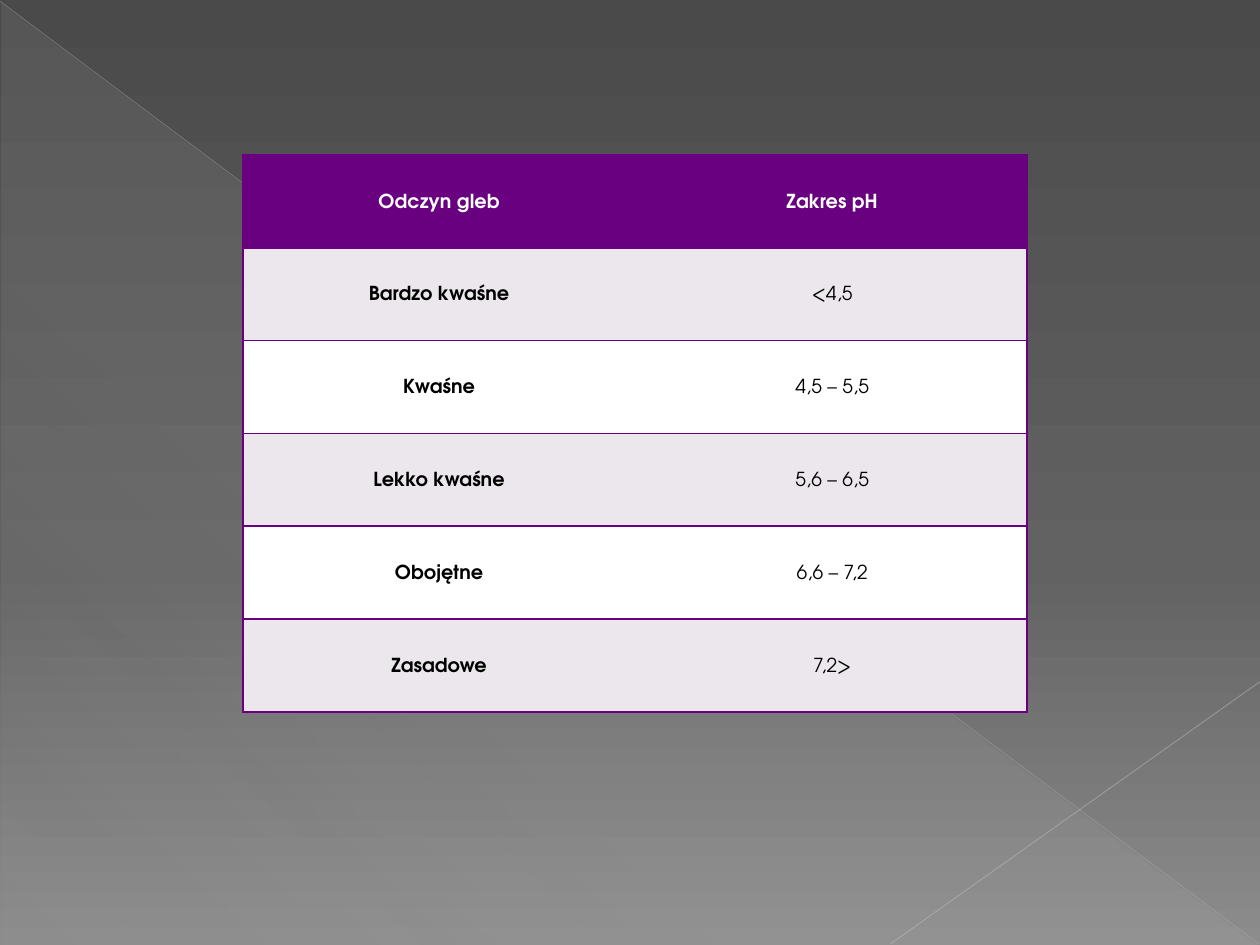
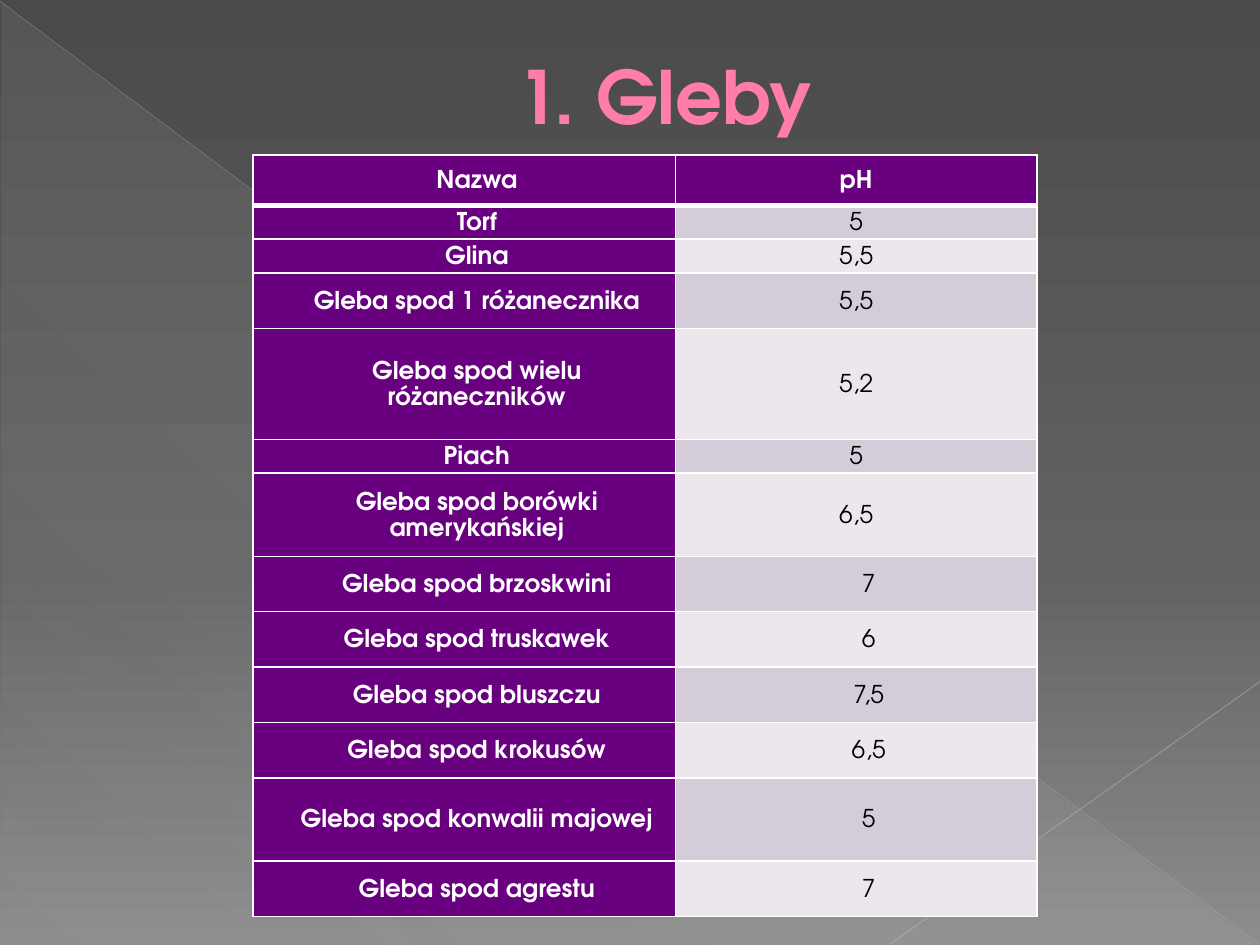
from typing import NamedTuple

from pptx import Presentation
from pptx.dml.color import RGBColor as Rgb
from pptx.enum.shapes import MSO_CONNECTOR as Conn, MSO_SHAPE as Shape
from pptx.enum.text import MSO_ANCHOR as Anchor, PP_ALIGN as Align
from pptx.oxml import parse_xml
from pptx.oxml.ns import nsdecls, qn
from pptx.util import Emu, Inches, Pt

FONT = "TeX Gyre Adventor"
HUES = {
    "dark": "4A4A4A", "mid": "626262", "pale": "8C8C8C",
    "veil": "D2D2D2", "fall": "BFBFBF", "rise": "C6C6C6",
    "plum": "68007F", "mist": "EBE7EC", "haze": "D4CCD8",
    "white": "FFFFFF", "black": "000000", "pink": "FF7DA7", "rose": "B12761",
}

# The slide is a grid of 100 columns by 75 rows
WIDE, HIGH = Inches(10), Inches(7.5)
COL, ROW = WIDE / 100, HIGH / 75


class Stop(NamedTuple):
    pos: int
    hue: str
    alpha: int = 100


class Ray(NamedTuple):
    start: tuple[float, float]
    end: tuple[float, float]
    hue: str
    width: float
    alpha: int


class Cell(NamedTuple):
    text: str
    fill: str
    hue: str
    bold: bool
    edges: dict[str, float]  # side: width in points
    indent: float = 0


class Chart(NamedTuple):
    """A table: its place, track sizes in grid units and type style."""
    left: float
    top: float
    cols: list[float]
    rows: list[float]
    cells: list[list[Cell]]
    size: float
    inset: float
    edge: str


BACK = [Stop(0, "dark"), Stop(60, "mid"), Stop(100, "pale")]
VEIL = [Stop(0, "veil", 10), Stop(70, "veil", 8), Stop(100, "veil", 1)]
RAYS = [
    Ray((0, 0.1), (99.9, 74.9), "fall", 0.39, 35),
    Ray((100, 54.1), (70.7, 74.9), "rise", 0.47, 45),
]


def across(n: float) -> Emu:
    return Emu(round(n * COL))


def down(n: float) -> Emu:
    return Emu(round(n * ROW))


def rgb(hue: str) -> Rgb:
    return Rgb.from_string(HUES[hue])


def blend(fill, host, stops: list[Stop], angle: int) -> None:
    """Fill with a linear gradient of any number of stops."""
    fill.gradient()
    node = next(host.iter(qn("a:gradFill")))
    marks = "".join(
        f'<a:gs pos="{s.pos * 1000}"><a:srgbClr val="{HUES[s.hue]}">'
        f'<a:alpha val="{s.alpha * 1000}"/></a:srgbClr></a:gs>' for s in stops)
    fresh = parse_xml(
        f'<a:gradFill {nsdecls("a")} rotWithShape="1"><a:gsLst>{marks}</a:gsLst>'
        f'<a:lin ang="{angle * 60000}" scaled="0"/></a:gradFill>')
    node.getparent().replace(node, fresh)


def stroke(tag: str, hue: str, width: float):
    return parse_xml(
        f'<a:{tag} {nsdecls("a")} w="{Pt(width)}"><a:solidFill>'
        f'<a:srgbClr val="{HUES[hue]}"/></a:solidFill></a:{tag}>')


def write(frame, text: str, size: float, hue: str, bold: bool, indent: float):
    """Add one centred run; return it with its paragraph."""
    para = frame.paragraphs[0]
    para.alignment = Align.CENTER
    if indent:
        para._p.get_or_add_pPr().set("marL", str(Inches(indent)))
    run = para.add_run()
    run.text = text
    font = run.font
    font.name, font.size, font.bold = FONT, Pt(size), bold
    font.color.rgb = rgb(hue)
    return para, run


def draw_ray(slide, ray: Ray) -> None:
    (x1, y1), (x2, y2) = ray.start, ray.end
    line = slide.shapes.add_connector(
        Conn.STRAIGHT, across(x1), down(y1), across(x2), down(y2))
    line.line.color.rgb = rgb(ray.hue)
    line.line.width = Pt(ray.width)
    tint = next(line.element.spPr.iter(qn("a:srgbClr")))
    tint.append(parse_xml(f'<a:alpha {nsdecls("a")} val="{ray.alpha * 1000}"/>'))
    line.element.spPr.append(parse_xml(f'<a:effectLst {nsdecls("a")}/>'))


def new_slide(deck):
    """Add a blank slide with the shared veil and rays."""
    slide = deck.slides.add_slide(deck.slide_layouts[6])
    veil = slide.shapes.add_shape(
        Shape.RIGHT_TRIANGLE, across(0.1), down(0.2), across(99.8), down(74.8))
    veil.shadow.inherit = False
    veil.line.fill.background()
    blend(veil.fill, veil.element, VEIL, 133)
    for ray in RAYS:
        draw_ray(slide, ray)
    return slide


def draw_title(slide, text: str) -> None:
    box = slide.shapes.add_textbox(across(5.1), down(1.3), across(90), down(12.5))
    frame = box.text_frame
    frame.word_wrap = True
    frame.vertical_anchor = Anchor.MIDDLE
    _, run = write(frame, text, 42, "pink", True, 0.53)
    run.font._element.insert(0, stroke("ln", "rose", 0.5))


def draw_cell(slot, cell: Cell, chart: Chart) -> None:
    slot.vertical_anchor = Anchor.MIDDLE
    slot.margin_left = slot.margin_right = Inches(chart.inset)
    slot.margin_top = slot.margin_bottom = 0
    slot.fill.solid()
    slot.fill.fore_color.rgb = rgb(cell.fill)
    para, _ = write(slot.text_frame, cell.text, chart.size,
                    cell.hue, cell.bold, cell.indent)
    para.line_spacing = 1.15
    sides = [s for s in "LRTB" if s in cell.edges]
    for i, side in enumerate(sides):
        edge = stroke(f"ln{side}", chart.edge, cell.edges[side])
        slot._tc.get_or_add_tcPr().insert(i, edge)


def draw_table(slide, chart: Chart) -> None:
    table = slide.shapes.add_table(
        len(chart.rows), len(chart.cols), across(chart.left), down(chart.top),
        across(sum(chart.cols)), down(sum(chart.rows))).table
    table.first_row = table.horz_banding = False
    style = next(table._tbl.iter(qn("a:tableStyleId")))
    style.text = "{2D5ABB26-0587-4C30-8999-92F81FD0307C}"  # no style, no grid
    for col, size in zip(table.columns, chart.cols):
        col.width = across(size)
    for row, size in zip(table.rows, chart.rows):
        row.height = down(size)
    for r, line in enumerate(chart.cells):
        for c, cell in enumerate(line):
            draw_cell(table.cell(r, c), cell, chart)


# Slide 1: soil reaction classes
RANGES = [
    ("Odczyn gleb", "Zakres pH"),
    ("Bardzo kwaśne", "<4,5"),
    ("Kwaśne", "4,5 – 5,5"),
    ("Lekko kwaśne", "5,6 – 6,5"),
    ("Obojętne", "6,6 – 7,2"),
    ("Zasadowe", "7,2>"),
]


def range_chart() -> Chart:
    cells = []
    for i, (name, span) in enumerate(RANGES):
        head = i == 0
        fill = "plum" if head else ("white", "mist")[i % 2]
        hue = "white" if head else "black"
        cells.append([
            Cell(name, fill, hue, True, dict.fromkeys("LTB", 1)),
            Cell(span, fill, hue, head, dict.fromkeys("RTB", 1), 0.02)])
    return Chart(19.3, 12.3, [31.1] * 2, [7.37] * len(RANGES), cells,
                 11, 0.07, "plum")


# Slide 2: measured soils as name, pH, height in steps
STEP = 2.2
SOILS = [
    ("Torf", "5", 1),
    ("Glina", "5,5", 1),
    ("Gleba spod 1 różanecznika", "5,5", 2),
    ("Gleba spod wielu różaneczników", "5,2", 4),
    ("Piach", "5", 1),
    ("Gleba spod borówki amerykańskiej", "6,5", 3),
    ("Gleba spod brzoskwini", "7", 2),
    ("Gleba spod truskawek", "6", 2),
    ("Gleba spod bluszczu", "7,5", 2),
    ("Gleba spod krokusów", "6,5", 2),
    ("Gleba spod konwalii majowej", "5", 3),
    ("Gleba spod agrestu", "7", 2),
]
SHIFT = 6  # values from this soil on are indented


def soil_chart() -> Chart:
    thin = dict.fromkeys("LRTB", 1)
    thick = thin | {"B": 3}
    cells = [[Cell("Nazwa", "plum", "white", True, thick, 0.2),
              Cell("pH", "plum", "white", True, thick)]]
    for i, (name, value, _) in enumerate(SOILS):
        top = thick["B"] if i == 0 else 1
        edges = thin | {"T": top}
        cells.append([
            Cell(name, "plum", "white", True, edges, 0.2),
            Cell(value, ("haze", "mist")[i % 2], "black", False, edges,
                 0.2 if i >= SHIFT else 0)])
    rows = [4] + [STEP * steps for _, _, steps in SOILS]
    return Chart(20.1, 12.3, [33.5, 28.7], rows, cells, 14, 0.04, "white")


def main() -> None:
    deck = Presentation()
    deck.slide_width, deck.slide_height = WIDE, HIGH
    master = deck.slide_master
    blend(master.background.fill, master.element, BACK, 90)

    draw_table(new_slide(deck), range_chart())

    soils = new_slide(deck)
    draw_title(soils, "1. Gleby")
    draw_table(soils, soil_chart())

    deck.save("out.pptx")


if __name__ == "__main__":
    main()
